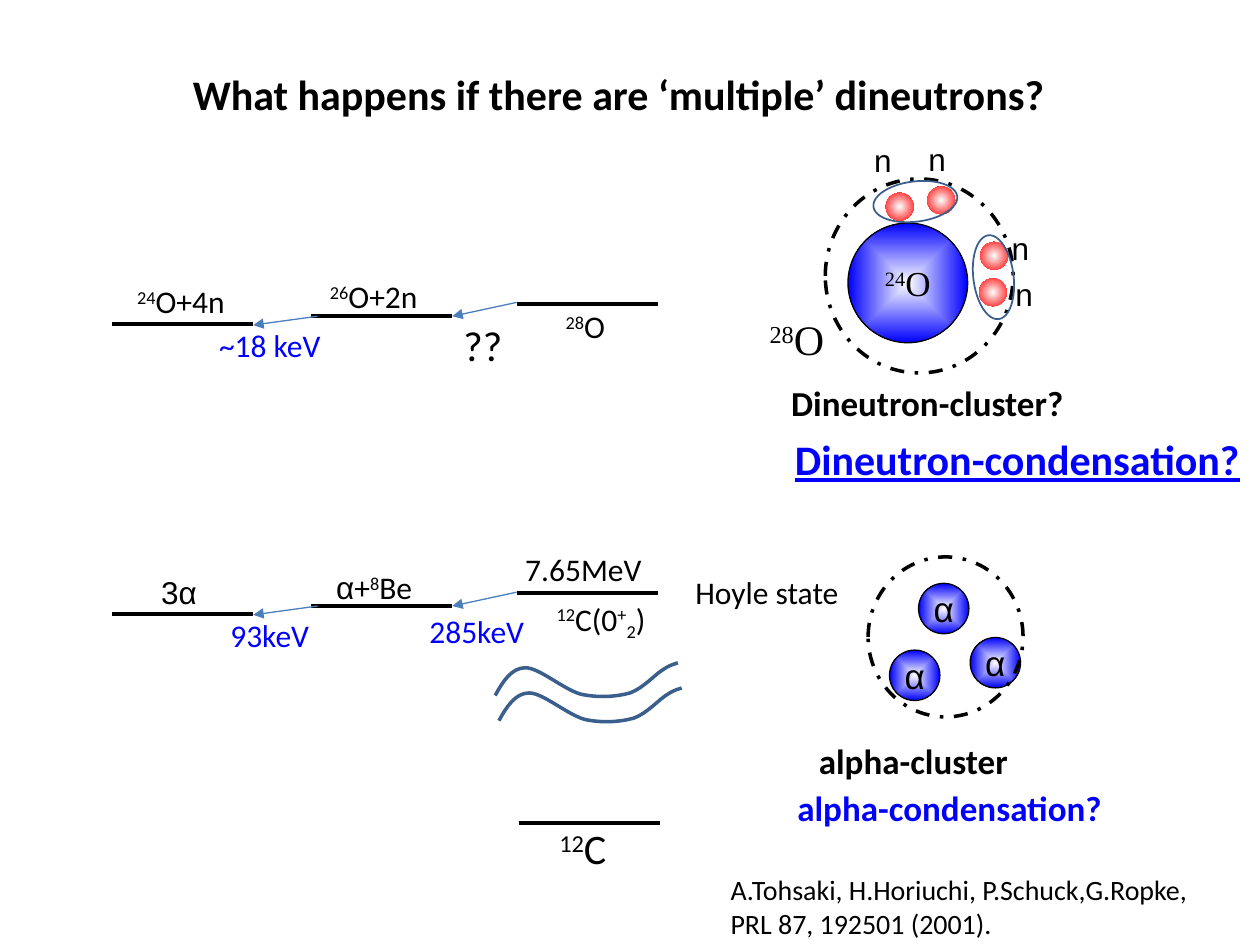
from dataclasses import dataclass

from lxml import etree
from pptx import Presentation
from pptx.dml.color import RGBColor
from pptx.enum.dml import MSO_LINE
from pptx.enum.shapes import MSO_CONNECTOR, MSO_SHAPE
from pptx.enum.text import MSO_ANCHOR, MSO_AUTO_SIZE, PP_ALIGN
from pptx.oxml.ns import qn
from pptx.util import Inches, Pt

STRAIGHT = MSO_CONNECTOR.STRAIGHT
OVAL = MSO_SHAPE.OVAL
DASH_DOT = MSO_LINE.DASH_DOT
TOP, MIDDLE = MSO_ANCHOR.TOP, MSO_ANCHOR.MIDDLE
FIT_TEXT = MSO_AUTO_SIZE.SHAPE_TO_FIT_TEXT
LEFT, CENTER = PP_ALIGN.LEFT, PP_ALIGN.CENTER
SUPER, SUB = 30, -25


@dataclass(frozen=True)
class Theme:
    """Colours, fonts and type sizes of the slide."""

    black: RGBColor = RGBColor(0, 0, 0)
    white: RGBColor = RGBColor(255, 255, 255)
    blue: RGBColor = RGBColor(0, 0, 255)
    red: RGBColor = RGBColor(255, 0, 0)
    outline: RGBColor = RGBColor(0x3A, 0x5F, 0x8C)
    arrow: RGBColor = RGBColor(0x4B, 0x7E, 0xBC)
    sans: str = "Calibri"
    plain: str = "Arial"
    serif: str = "Times New Roman"
    cite: int = 16
    label: int = 18
    caption: int = 20
    heading: int = 24


THEME = Theme()


def write(frame, lines, size, color=THEME.black, face=THEME.sans, bold=False,
          underline=None, align=LEFT):
    """Fill a frame with lines, each a string or a list of (text, baseline, face) runs."""
    frame.word_wrap = False
    for index, line in enumerate(lines):
        paragraph = frame.add_paragraph() if index else frame.paragraphs[0]
        paragraph.alignment = align
        font = paragraph.font
        font.name, font.size, font.bold = face, Pt(size), bold
        font.underline = underline
        font.color.rgb = color
        for text, baseline, run_face in [(line, 0, None)] if isinstance(line, str) else line:
            run = paragraph.add_run()
            run.text = text
            if baseline:
                run.font._element.set("baseline", str(baseline * 1000))
            if run_face:
                run.font.name = run_face


def isotope(mass, symbol):
    """Return the runs of a symbol with its mass number raised."""
    return [(mass, SUPER, None), (symbol, 0, None)]


def add_label(shapes, box, line, size=THEME.label, **style):
    """Add an unwrapped text box holding one line, or several given as a tuple."""
    frame = shapes.add_textbox(*map(Inches, box)).text_frame
    write(frame, line if isinstance(line, tuple) else (line,), size, **style)
    frame.auto_size = FIT_TEXT


def add_ring(shapes, box, color, width, dash=None, rotation=0):
    """Add an unfilled ellipse."""
    ring = shapes.add_shape(OVAL, *map(Inches, box))
    ring.shadow.inherit = False
    ring.rotation = rotation
    ring.fill.background()
    ring.line.color.rgb = color
    ring.line.width = Pt(width)
    if dash:
        ring.line.dash_style = dash


def add_ball(shapes, left, top, size, color, gradient):
    """Add a disc shaded from a white centre to its colour."""
    ball = shapes.add_shape(OVAL, *map(Inches, (left, top, size, size)))
    ball.shadow.inherit = False
    ball.line.fill.background()
    ball.fill.gradient()
    stops = ball.fill.gradient_stops
    for stop, position, stop_color in zip(stops, (0, 1), (THEME.white, color)):
        stop.position = position
        stop.color.rgb = stop_color
    linear = next(ball._element.iter(qn("a:lin")))
    radial = etree.Element(qn("a:path"), path=gradient)
    middle = {side: "50000" for side in "ltrb"}
    etree.SubElement(radial, qn("a:fillToRect"), middle)
    linear.getparent().replace(linear, radial)
    return ball


def add_nucleus(shapes, left, top, size, line, face):
    """Add a blue outlined ball with its name in the middle."""
    nucleus = add_ball(shapes, left, top, size, THEME.blue, "shape")
    nucleus.line.color.rgb = THEME.black
    nucleus.line.width = Pt(0.75)
    nucleus.text_frame.vertical_anchor = MIDDLE
    write(nucleus.text_frame, (line,), THEME.caption, face=face, align=CENTER)


def add_line(shapes, start, end, color, width, arrow=False):
    """Add a straight line, with an arrowhead at its end if asked."""
    line = shapes.add_connector(STRAIGHT, *map(Inches, start + end))
    line.line.color.rgb = color
    line.line.width = Pt(width)
    if arrow:
        etree.SubElement(line.line._get_or_add_ln(), qn("a:tailEnd"), type="triangle")
    etree.SubElement(line._element.spPr, qn("a:effectLst"))


def add_level(shapes, left, y):
    """Add one energy level."""
    add_line(shapes, (left, y), (left + 1.12, y), THEME.black, 2.25)


def add_decay_levels(shapes, y):
    """Add three rising levels, the lowest at y, and the two decay arrows."""
    for left, rise in ((0.89, 0), (2.47, 0.06), (4.1, 0.16)):
        add_level(shapes, left, y - rise)
    for start, end in (((4.1, y - 0.17), (3.59, y - 0.06)),
                       ((2.52, y - 0.06), (2.01, y + 0.01))):
        add_line(shapes, start, end, THEME.arrow, 0.75, arrow=True)


def add_wave(shapes, left, top):
    """Add one curved stroke of the break in the energy scale."""
    points = [(0, 0.26), (0.06, 0.15), (0.13, 0.04), (0.24, 0.04),
              (0.35, 0.04), (0.54, 0.21), (0.68, 0.25),
              (0.82, 0.28), (0.96, 0.27), (1.07, 0.24),
              (1.18, 0.2), (1.27, 0.09), (1.34, 0.05),
              (1.4, 0.01), (1.43, 0.01), (1.45, 0)]
    corners = [(Inches(left + x), Inches(top + y)) for x, y in points]
    builder = shapes.build_freeform(*corners[0])
    builder.add_line_segments(corners[1:], close=False)
    wave = builder.convert_to_shape()
    wave.shadow.inherit = False
    wave.fill.background()
    wave.line.color.rgb = THEME.outline
    wave.line.width = Pt(2)
    segments = list(wave._element.iter(qn("a:lnTo")))
    for first in range(0, len(segments), 3):
        curve = etree.Element(qn("a:cubicBezTo"))
        segments[first].addprevious(curve)
        for segment in segments[first:first + 3]:
            curve.append(segment[0])
            segment.getparent().remove(segment)


def add_dineutron(shapes, neutrons, labels, ring, rotation):
    """Add two neutrons with their labels and the ellipse that pairs them."""
    for left, top in neutrons:
        add_ball(shapes, left, top, 0.22, THEME.red, "circle")
    for left, top in labels:
        add_label(shapes, (left, top, 0.34, 0.4), "n", face=THEME.plain)
    add_ring(shapes, (*ring, 0.67, 0.32), THEME.outline, 1, rotation=rotation)


def add_oxygen_cluster(shapes):
    """Add the oxygen core surrounded by two dineutrons."""
    add_nucleus(shapes, 6.73, 1.77, 0.95, isotope("24", "O"), THEME.serif)
    add_ring(shapes, (6.55, 1.42, 1.49, 1.54), THEME.black, 2, DASH_DOT)
    add_label(shapes, (6.01, 2.44, 0.67, 0.5), isotope("28", "O"), THEME.heading,
              face=THEME.serif)
    add_dineutron(shapes, ((7.78, 1.92), (7.77, 2.21)), ((7.93, 1.77), (7.96, 2.13)),
                  (7.55, 2.04), 263)
    add_dineutron(shapes, ((7.36, 1.48), (7.03, 1.53)), ((7.27, 1.06), (6.84, 1.07)),
                  (6.93, 1.44), 353)
    add_label(shapes, (6.18, 2.98, 2.79, 0.44), "Dineutron-cluster?", THEME.caption, bold=True)


def add_alpha_cluster(shapes):
    """Add three alpha particles inside a dashed ring."""
    for left, top in ((7.29, 4.63), (7.06, 5.16), (7.7, 5.06)):
        add_nucleus(shapes, left, top, 0.4, "α", THEME.plain)
    add_ring(shapes, (6.89, 4.42, 1.23, 1.27), THEME.black, 2, DASH_DOT)


def add_carbon_scheme(shapes):
    """Add the level scheme of the Hoyle state and the carbon ground state."""
    add_decay_levels(shapes, 4.87)
    beryllium = [("α", 0, THEME.plain), ("+", 0, None), *isotope("8", "Be")]
    add_label(shapes, (2.57, 4.46, 0.91, 0.4), beryllium)
    add_label(shapes, (1.18, 4.5, 0.49, 0.4), "3α", face=THEME.plain)
    add_label(shapes, (3.31, 4.81, 1.06, 0.4), "285keV", color=THEME.blue)
    add_label(shapes, (1.73, 4.84, 0.92, 0.4), "93keV", color=THEME.blue)
    add_level(shapes, 4.12, 6.53)
    add_label(shapes, (4.07, 4.32, 1.21, 0.4), "7.65MeV")
    add_label(shapes, (4.34, 6.48, 0.69, 0.5), isotope("12", "C"), THEME.heading)
    add_wave(shapes, 3.96, 5.46)
    add_wave(shapes, 3.93, 5.26)


def add_oxygen_scheme(shapes):
    """Add the level scheme of the oxygen isotopes."""
    add_decay_levels(shapes, 2.57)
    add_label(shapes, (0.99, 2.19, 1.01, 0.4), isotope("24", "O+4n"))
    add_label(shapes, (2.52, 2.15, 1.01, 0.4), isotope("26", "O+2n"))
    add_label(shapes, (4.39, 2.39, 0.58, 0.4), isotope("28", "O"))
    add_label(shapes, (1.64, 2.54, 1.13, 0.4), "~18 keV", color=THEME.blue)
    add_label(shapes, (3.58, 2.49, 0.58, 0.5), "??", THEME.heading)


def set_title(title, text):
    """Place and format the title."""
    title.left, title.top, title.width, title.height = map(Inches, (1.43, 0.49, 7.9, 0.5))
    write(title.text_frame, (text,), THEME.heading, bold=True)
    title.text_frame.vertical_anchor = TOP
    title.text_frame.auto_size = FIT_TEXT


def main():
    """Build the slide and save it."""
    deck = Presentation()
    deck.slide_width, deck.slide_height = Inches(10), Inches(7.5)
    slide = deck.slides.add_slide(deck.slide_layouts[5])
    shapes = slide.shapes
    set_title(shapes.title, "What happens if there are ‘multiple’ dineutrons?")
    for add_part in (add_oxygen_cluster, add_alpha_cluster, add_carbon_scheme, add_oxygen_scheme):
        add_part(shapes.add_group_shape().shapes)
    add_label(shapes, (5.42, 4.5, 1.46, 0.4), "Hoyle state")
    add_label(shapes, (6.21, 3.39, 3.77, 0.5), "Dineutron-condensation?", THEME.heading,
              color=THEME.blue, bold=True, underline=True)
    add_label(shapes, (6.23, 6.19, 2.64, 0.44), "alpha-condensation?", THEME.caption,
              color=THEME.blue, bold=True)
    add_label(shapes, (5.7, 6.88, 4.4, 0.64),
              ("A.Tohsaki, H.Horiuchi, P.Schuck,G.Ropke,", "PRL 87, 192501 (2001)."), THEME.cite)
    hoyle = [*isotope("12", "C(0"), ("+", SUPER, None), ("2", SUB, None), (")", 0, None)]
    add_label(shapes, (4.32, 4.71, 1.07, 0.4), hoyle)
    add_label(shapes, (6.4, 5.82, 2.02, 0.44), "alpha-cluster", THEME.caption, bold=True)
    deck.save("out.pptx")


if __name__ == "__main__":
    main()
